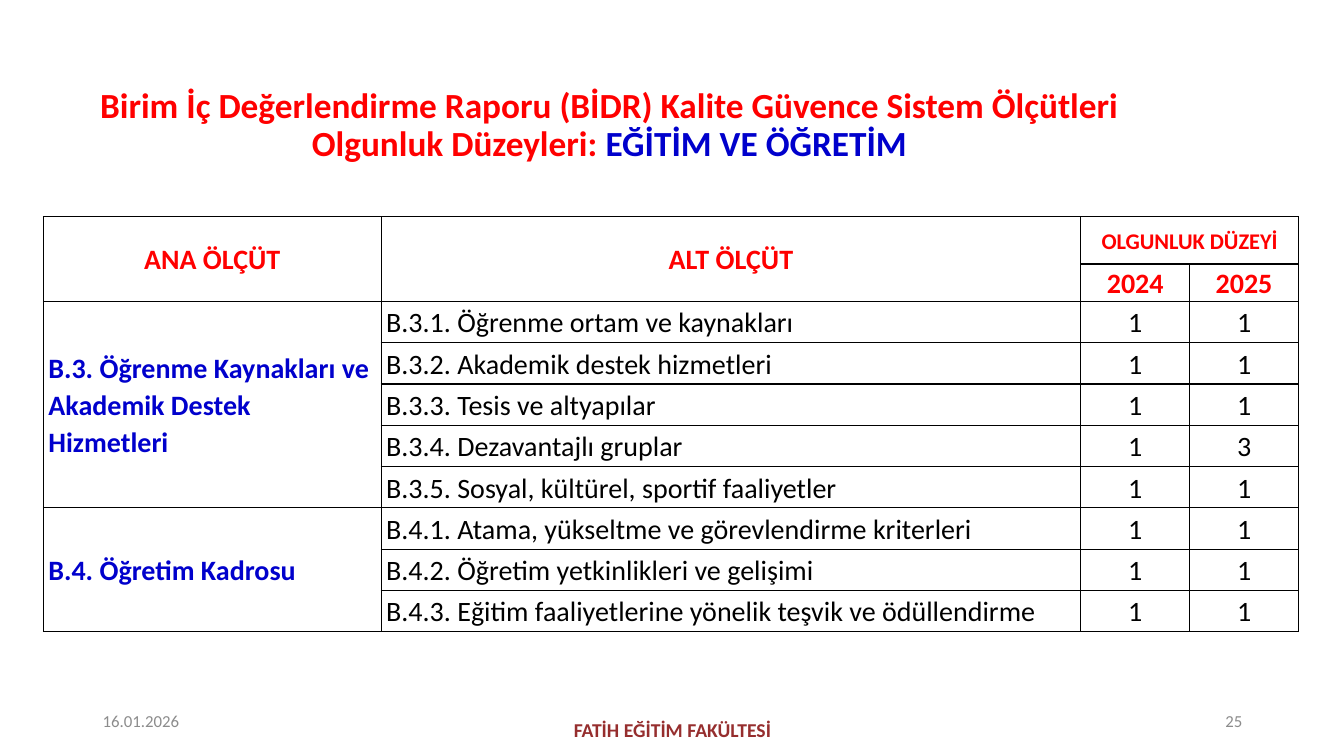
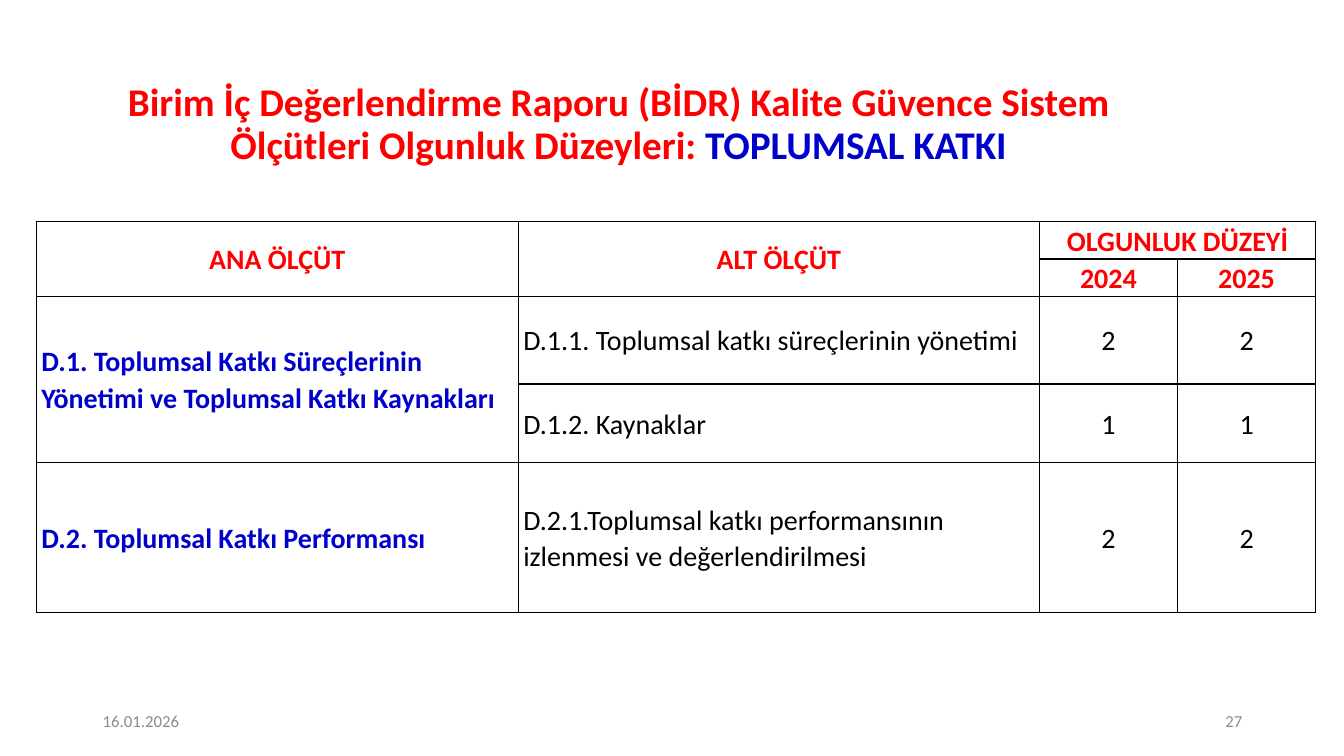
from dataclasses import dataclass

from lxml.etree import SubElement
from pptx import Presentation
from pptx.dml.color import RGBColor
from pptx.enum.text import MSO_ANCHOR, PP_ALIGN
from pptx.oxml.ns import qn
from pptx.util import Inches, Pt


@dataclass(frozen=True)
class Theme:
    font: str = "Calibri"
    red: str = "FF0000"
    blue: str = "0000CC"
    black: str = "000000"
    gray: str = "8C8C8C"
    maroon: str = "962E2E"
    body_size: float = 20
    band_size: float = 14
    footer_size: float = 12
    border_width: float = 1
    title_spacing: float = 0.9
    cell_spacing: float = 1.07


theme = Theme()
DATE = "16.01.2026"
TITLE = "Birim İç Değerlendirme Raporu (BİDR) Kalite Güvence Sistem Ölçütleri Olgunluk Düzeyleri: "

slides = [
    {
        "topic": "EĞİTİM VE ÖĞRETİM",
        "title_box": (0.43, 0.9, 11.23, 0.7),
        "title_size": 25.2,
        "number": "25",
        "band": "FATİH EĞİTİM FAKÜLTESİ",
        "table_at": (0.43, 2.15),
        "columns": [3.35, 6.94, 1.08, 1.08],
        "rows": [0.47, 0.37] + [0.41] * 8,
        "level_size": 16,
        "sub_align": PP_ALIGN.JUSTIFY,
        "groups": [
            ("B.3. Öğrenme Kaynakları ve Akademik Destek Hizmetleri", [
                ("B.3.1. Öğrenme ortam ve kaynakları", "1", "1"),
                ("B.3.2. Akademik destek hizmetleri", "1", "1"),
                ("B.3.3. Tesis ve altyapılar", "1", "1"),
                ("B.3.4. Dezavantajlı gruplar", "1", "3"),
                ("B.3.5. Sosyal, kültürel, sportif faaliyetler", "1", "1"),
            ]),
            ("B.4. Öğretim Kadrosu", [
                ("B.4.1. Atama, yükseltme ve görevlendirme kriterleri", "1", "1"),
                ("B.4.2. Öğretim yetkinlikleri ve gelişimi", "1", "1"),
                ("B.4.3. Eğitim faaliyetlerine yönelik teşvik ve ödüllendirme", "1", "1"),
            ]),
        ],
    },
    {
        "topic": "TOPLUMSAL KATKI",
        "title_box": (0.52, 0.76, 11.23, 0.97),
        "title_size": 28,
        "number": "27",
        "band": None,
        "table_at": (0.36, 2.2),
        "columns": [4.78, 5.17, 1.37, 1.37],
        "rows": [0.37, 0.37, 0.87, 0.78, 1.49],
        "level_size": theme.body_size,
        "sub_align": PP_ALIGN.LEFT,
        "groups": [
            ("D.1. Toplumsal Katkı Süreçlerinin Yönetimi ve Toplumsal Katkı Kaynakları", [
                ("D.1.1. Toplumsal katkı süreçlerinin yönetimi", "2", "2"),
                ("D.1.2. Kaynaklar", "1", "1"),
            ]),
            ("D.2. Toplumsal Katkı Performansı", [
                ("D.2.1.Toplumsal katkı performansının izlenmesi ve değerlendirilmesi", "2", "2"),
            ]),
        ],
    },
]


def write_paragraph(text_frame, text, size, color, bold=False, align=PP_ALIGN.LEFT, spacing=1.0):
    paragraph = text_frame.paragraphs[0]
    paragraph.add_run().text = text
    paragraph.alignment = align
    paragraph.line_spacing = spacing
    paragraph.font.name = theme.font
    paragraph.font.size = Pt(size)
    paragraph.font.bold = bold
    paragraph.font.color.rgb = RGBColor.from_string(color)
    return paragraph


def add_text(slide, box, text, size, color, **style):
    text_frame = slide.shapes.add_textbox(*map(Inches, box)).text_frame
    text_frame.word_wrap = True
    text_frame.vertical_anchor = MSO_ANCHOR.MIDDLE
    return write_paragraph(text_frame, text, size, color, **style)


presentation = Presentation()
presentation.slide_width = Inches(13.33)
presentation.slide_height = Inches(7.5)
blank_layout = presentation.slide_layouts[6]
header_style = {"color": theme.red, "bold": True, "align": PP_ALIGN.CENTER}

for content in slides:
    slide = presentation.slides.add_slide(blank_layout)

    if content["band"]:
        add_text(slide, (4.42, 7.04, 4.5, 0.4), content["band"], theme.band_size, theme.maroon,
                 bold=True, align=PP_ALIGN.CENTER)
    title = add_text(slide, content["title_box"], TITLE, content["title_size"], theme.red,
                     bold=True, align=PP_ALIGN.CENTER, spacing=theme.title_spacing)
    topic = title.add_run()
    topic.text = content["topic"]
    topic.font.color.rgb = RGBColor.from_string(theme.blue)
    add_text(slide, (0.92, 6.95, 3, 0.4), DATE, theme.footer_size, theme.gray)
    add_text(slide, (9.42, 6.95, 3, 0.4), content["number"], theme.footer_size, theme.gray,
             align=PP_ALIGN.RIGHT)

    columns, rows = content["columns"], content["rows"]
    left, top = content["table_at"]
    table = slide.shapes.add_table(
        len(rows), len(columns),
        Inches(left), Inches(top), Inches(sum(columns)), Inches(sum(rows)),
    ).table
    table.first_row = False
    table.horz_banding = False
    for column, width in zip(table.columns, columns):
        column.width = Inches(width)
    for row, height in zip(table.rows, rows):
        row.height = Inches(height)

    for cell in table.iter_cells():
        cell.vertical_anchor = MSO_ANCHOR.MIDDLE
        cell.margin_left = cell.margin_right = Inches(0.05)
        cell.margin_top = cell.margin_bottom = 0
        properties = cell._tc.get_or_add_tcPr()
        for side in ("a:lnL", "a:lnR", "a:lnT", "a:lnB"):
            border = SubElement(properties, qn(side), w=str(Pt(theme.border_width)))
            border_fill = SubElement(border, qn("a:solidFill"))
            SubElement(border_fill, qn("a:srgbClr"), val=theme.black)
        cell.fill.background()

    entries = [
        (0, 0, "ANA ÖLÇÜT", header_style),
        (0, 1, "ALT ÖLÇÜT", header_style),
        (0, 2, "OLGUNLUK DÜZEYİ", {**header_style, "size": content["level_size"]}),
        (1, 2, "2024", header_style),
        (1, 3, "2025", header_style),
    ]
    merges = [(0, 0, 1, 0), (0, 1, 1, 1), (0, 2, 0, 3)]
    first = 2
    for main_criterion, criteria in content["groups"]:
        last = first + len(criteria) - 1
        entries.append((first, 0, main_criterion, {"color": theme.blue, "bold": True}))
        if last > first:
            merges.append((first, 0, last, 0))
        for row_index, values in enumerate(criteria, first):
            for column_index, value in enumerate(values, 1):
                align = content["sub_align"] if column_index == 1 else PP_ALIGN.CENTER
                entries.append((row_index, column_index, value,
                                {"color": theme.black, "align": align}))
        first = last + 1

    for first_row, first_column, last_row, last_column in merges:
        table.cell(first_row, first_column).merge(table.cell(last_row, last_column))
    for row_index, column_index, text, style in entries:
        write_paragraph(table.cell(row_index, column_index).text_frame, text,
                        **{"size": theme.body_size, "spacing": theme.cell_spacing, **style})

presentation.save("out.pptx")
